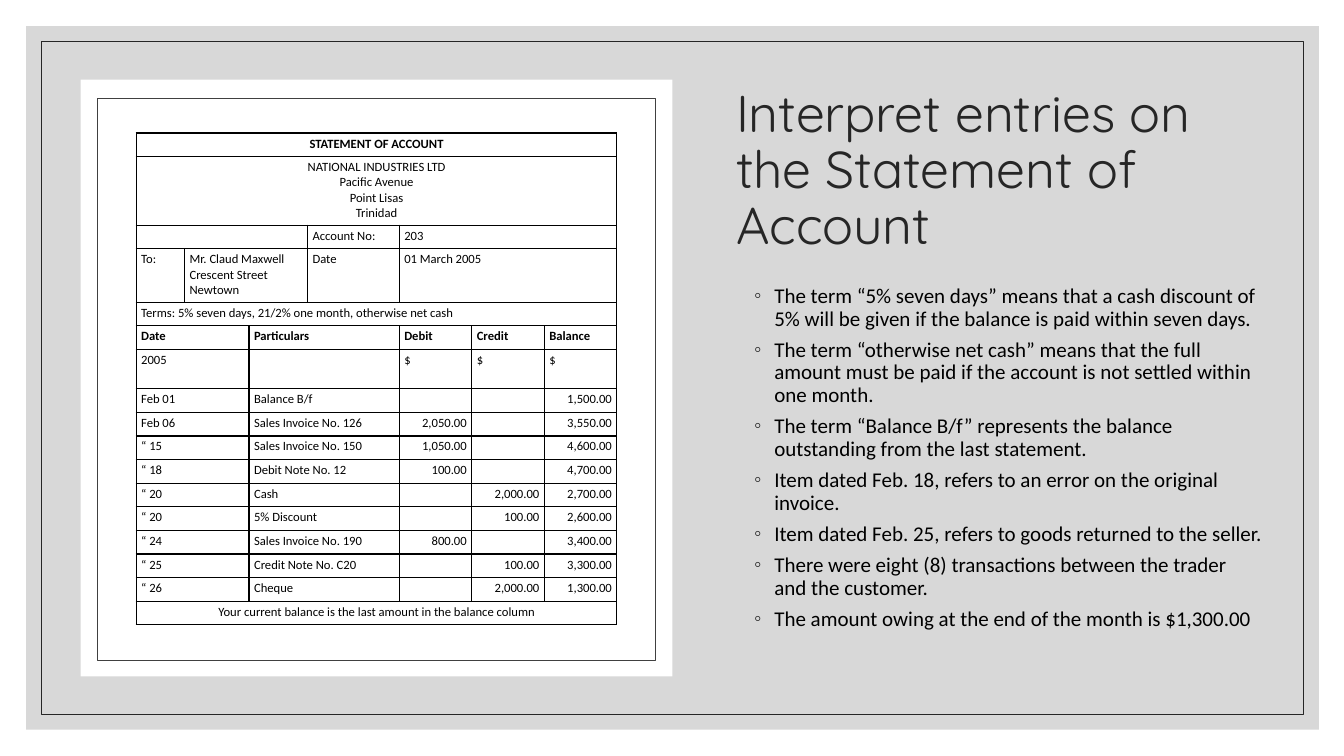
from lxml import etree
from pptx import Presentation
from pptx.dml.color import RGBColor
from pptx.enum.shapes import MSO_SHAPE
from pptx.enum.text import MSO_ANCHOR, MSO_AUTO_SIZE, PP_ALIGN
from pptx.oxml.ns import qn
from pptx.util import Inches, Pt

RECT = MSO_SHAPE.RECTANGLE
TOP, MIDDLE = MSO_ANCHOR.TOP, MSO_ANCHOR.MIDDLE
NO_FIT = MSO_AUTO_SIZE.NONE
LEFT, CENTER, RIGHT = PP_ALIGN.LEFT, PP_ALIGN.CENTER, PP_ALIGN.RIGHT

COLORS = {"text": "000000", "dark": "262626", "frame": "404040",
          "panel": "BFBFBF", "paper": "FFFFFF"}

# Statement table: column spans of each kind of row
FULL, ACCOUNT, ADDRESS, LEDGER = (7,), (3, 1, 3), (1, 2, 1, 3), (2, 2, 1, 1, 1)
COLUMNS = [0.48, 0.64, 0.58, 0.91, 0.72, 0.72, 0.72]
TABLE_HEIGHT = 4.88
TALL_ROWS = {1: 0.68, 3: 0.53, 6: 0.39}

# Each row: spans, texts, alignment of the first cells, alignment of the amounts, bold
HEADER = [
    (FULL, ["STATEMENT OF ACCOUNT"], CENTER, CENTER, True),
    (FULL, ["NATIONAL INDUSTRIES LTD\nPacific Avenue\nPoint Lisas\nTrinidad"],
     CENTER, CENTER, False),
    (ACCOUNT, ["", "Account No:", "203"], LEFT, LEFT, False),
    (ADDRESS, ["To:", "Mr. Claud Maxwell\nCrescent Street\nNewtown", "Date",
               "01 March 2005"], LEFT, LEFT, False),
    (FULL, ["Terms: 5% seven days, 21/2% one month, otherwise net cash"],
     LEFT, LEFT, False),
    (LEDGER, ["Date", "Particulars", "Debit", "Credit", "Balance"], LEFT, LEFT, True),
    (LEDGER, ["2005", "", "$", "$", "$"], LEFT, LEFT, False),
]
ENTRIES = [
    ["Feb 01", "Balance B/f", "", "", "1,500.00"],
    ["Feb 06", "Sales Invoice No. 126", "2,050.00", "", "3,550.00"],
    ["“ 15", "Sales Invoice No. 150", "1,050.00", "", "4,600.00"],
    ["“ 18", "Debit Note No. 12", "100.00", "", "4,700.00"],
    ["“ 20", "Cash", "", "2,000.00", "2,700.00"],
    ["“ 20", "5% Discount", "", "100.00", "2,600.00"],
    ["“ 24", "Sales Invoice No. 190", "800.00", "", "3,400.00"],
    ["“ 25", "Credit Note No. C20", "", "100.00", "3,300.00"],
    ["“ 26", "Cheque", "", "2,000.00", "1,300.00"],
]
FOOTER = (FULL, ["Your current balance is the last amount in the balance column"],
          CENTER, CENTER, False)
STATEMENT = HEADER + [(LEDGER, e, LEFT, RIGHT, False) for e in ENTRIES] + [FOOTER]

POINTS = [
    "The term “5% seven days” means that a cash discount of 5% will be given if "
    "the balance is paid within seven days.",
    "The term “otherwise net cash” means that the full amount must be paid if the "
    "account is not settled within one month.",
    "The term “Balance B/f” represents the balance outstanding from the last statement.",
    "Item dated Feb. 18, refers to an error on the original invoice.",
    "Item dated Feb. 25, refers to goods returned to the seller.",
    "There were eight (8) transactions between the trader and the customer.",
    "The amount owing at the end of the month is $1,300.00",
]


def rgb(name):
    return RGBColor.from_string(COLORS[name])


def write(tf, text, size, font="Calibri", color="text", bold=False, align=LEFT,
          spacing=1.0, after=0):
    """Fill a text frame, one paragraph for each line of text."""
    for i, line in enumerate(text.split("\n")):
        p = tf.add_paragraph() if i else tf.paragraphs[0]
        p.alignment, p.line_spacing = align, spacing
        p.space_before, p.space_after = Pt(0), Pt(after)
        if not line:
            p._p.get_or_add_endParaRPr().set("sz", str(size * 100))
            continue
        r = p.add_run()
        r.text = line
        r.font.name, r.font.size, r.font.bold = font, Pt(size), bold
        r.font.color.rgb = rgb(color)


class StatementSlide:
    def __init__(self, prs):
        self.s = prs.slides.add_slide(prs.slide_layouts[1])

    def panel(self, x, y, w, h, fill=None, line=None, alpha=None):
        sp = self.s.shapes.add_shape(RECT, Inches(x), Inches(y), Inches(w), Inches(h))
        sp.shadow.inherit = False
        if fill:
            sp.fill.solid()
            sp.fill.fore_color.rgb = rgb(fill)
        else:
            sp.fill.background()
        if alpha:
            color = sp._element.spPr.find(".//" + qn("a:srgbClr"))
            etree.SubElement(color, qn("a:alpha")).set("val", str(alpha * 1000))
        if line:
            sp.line.color.rgb = rgb(line)
            sp.line.width = Pt(0.5)
        else:
            sp.line.fill.background()

    def placeholder(self, idx, x, y, w, h, anchor, text, **style):
        sp = self.s.placeholders[idx]
        sp.left, sp.top, sp.width, sp.height = map(Inches, (x, y, w, h))
        self.s.shapes._spTree.append(sp._element)  # bring in front of the panels
        tf = sp.text_frame
        tf.word_wrap, tf.auto_size, tf.vertical_anchor = True, NO_FIT, anchor
        write(tf, text, **style)
        return tf

    def bullets(self, tf, char, color):
        for p in tf.paragraphs:
            pPr = p._p.get_or_add_pPr()
            pPr.set("marL", str(Inches(0.38)))
            pPr.set("indent", str(Inches(-0.2)))
            tint = etree.SubElement(pPr, qn("a:buClr"))
            etree.SubElement(tint, qn("a:srgbClr")).set("val", COLORS[color])
            etree.SubElement(pPr, qn("a:buChar")).set("char", char)

    def borders(self, cell):
        tcPr = cell._tc.get_or_add_tcPr()
        for i, side in enumerate(("a:lnL", "a:lnR", "a:lnT", "a:lnB")):
            ln = etree.Element(qn(side), w=str(Pt(1)))
            fill = etree.SubElement(ln, qn("a:solidFill"))
            etree.SubElement(fill, qn("a:srgbClr")).set("val", COLORS["text"])
            tcPr.insert(i, ln)

    def table(self, x, y, columns, height, tall, rows):
        tb = self.s.shapes.add_table(len(rows), len(columns), Inches(x), Inches(y),
                                     Inches(sum(columns)), Inches(height)).table
        tb.first_row = tb.horz_banding = False
        for col, width in zip(tb.columns, columns):
            col.width = Inches(width)
        plain = (height - sum(tall.values())) / (len(rows) - len(tall))
        for i, (spans, texts, align, amounts, bold) in enumerate(rows):
            tb.rows[i].height = Inches(tall.get(i, plain))
            for cell in tb.rows[i].cells:
                cell.fill.background()
                self.borders(cell)
                cell.margin_left = cell.margin_right = Inches(0.05)
                cell.margin_top = cell.margin_bottom = Inches(0.03)
            start = 0
            for k, (span, text) in enumerate(zip(spans, texts)):
                cell = tb.cell(i, start)
                if span > 1:
                    cell.merge(tb.cell(i, start + span - 1))
                write(cell.text_frame, text, 9, bold=bold,
                      align=align if k < 2 else amounts)
                start += span


def main():
    prs = Presentation()
    prs.slide_width, prs.slide_height = Inches(13.33), Inches(7.5)
    s = StatementSlide(prs)

    # Background panel and its frame
    s.panel(0.26, 0.26, 12.82, 6.98, fill="panel", alpha=60)
    s.panel(0.41, 0.41, 12.52, 6.68, line="dark")

    # Title
    s.placeholder(0, 7.2, 0.8, 5.42, 1.8, MIDDLE,
                  "Interpret entries on the Statement of Account",
                  size=37, font="Quicksand", color="dark", spacing=0.9)

    # Paper sheet with the statement
    s.panel(0.8, 0.79, 5.87, 5.92, fill="paper")
    s.panel(0.97, 0.98, 5.53, 5.57, line="frame")
    s.table(1.35, 1.32, COLUMNS, TABLE_HEIGHT, TALL_ROWS, STATEMENT)

    # Explanations
    tf = s.placeholder(1, 7.2, 2.78, 5.42, 3.82, TOP, "\n".join(POINTS),
                       size=15, spacing=0.9, after=6)
    s.bullets(tf, "◦", "dark")

    prs.save("out.pptx")


if __name__ == "__main__":
    main()
